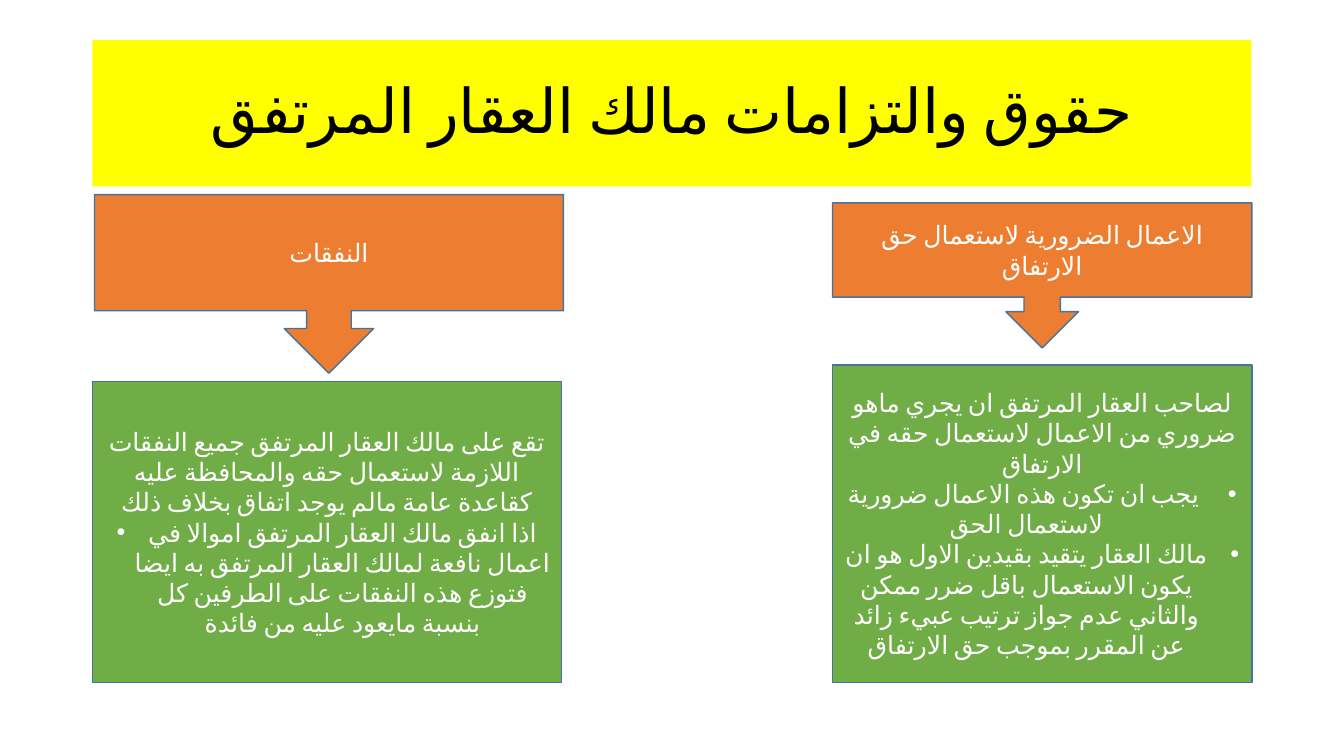
from pptx import Presentation
from pptx import util as u
from pptx.dml.color import RGBColor
from pptx.enum import shapes, text
from pptx.oxml.ns import qn
from lxml import etree

Pt = u.Pt
FONT = "Calibri"
BULLET_INDENT = Pt(22.5)


def add_block(kind, area, fill, line=None):
    left, top, width, height = (Pt(value) for value in area)
    block = page.shapes.add_shape(kind, left, top, width, height)
    block.shadow.inherit = False
    block.fill.solid()
    block.fill.fore_color.rgb = RGBColor.from_string(fill)
    if line:
        block.line.color.rgb = RGBColor.from_string(line)
        block.line.width = Pt(1)
    else:
        block.line.fill.background()
    block.text_frame.word_wrap = True
    block.text_frame.vertical_anchor = text.MSO_ANCHOR.MIDDLE
    return block


def write(para, content, size=18, color="FFFFFF", bullet=False, rtl=False):
    para.alignment = text.PP_ALIGN.CENTER
    span = para.add_run()
    span.text = content
    span.font.name = FONT
    span.font.size = Pt(size)
    span.font.color.rgb = RGBColor.from_string(color)
    # Arabic letters take the complex-script font
    etree.SubElement(span.font._element, qn("a:cs")).set("typeface", FONT)
    span.font._element.set("lang", "ar-IQ")
    properties = para._p.get_or_add_pPr()
    if rtl:
        properties.set("rtl", "1")
    if bullet:
        properties.set("marL", str(BULLET_INDENT))
        properties.set("indent", str(-BULLET_INDENT))
        font = etree.SubElement(properties, qn("a:buFont"))
        font.set("typeface", "Arial")
        etree.SubElement(properties, qn("a:buChar")).set("char", "•")


deck = Presentation()
deck.slide_width, deck.slide_height = Pt(960), Pt(540)
page = deck.slides.add_slide(deck.slide_layouts[6])

title = add_block(shapes.MSO_SHAPE.RECTANGLE, (66, 28.75, 828, 104.4), "FFFF00")
title_para = title.text_frame.paragraphs[0]
title_para.line_spacing = 0.9
write(title_para, "حقوق والتزامات مالك العقار المرتفق", size=44, color="000000")

# Each column: heading area and text, body area, introduction, bullets, bullet direction
columns = [
    ((594.7, 144.9, 299.5, 103.7), "الاعمال الضرورية لاستعمال حق الارتفاق",
     (594.7, 260.6, 299.5, 226.8),
     "لصاحب العقار المرتفق ان يجري ماهو ضروري من الاعمال لاستعمال حقه في الارتفاق",
     [" يجب ان تكون هذه الاعمال ضرورية لاستعمال الحق",
      "مالك العقار يتقيد بقيدين الاول هو ان يكون الاستعمال باقل ضرر ممكن "
      "والثاني عدم جواز ترتيب عبيء زائد عن المقرر بموجب حق الارتفاق"], True),
    ((67.5, 139, 335, 127.6), "النفقات",
     (66, 272.5, 335, 215),
     "تقع على مالك العقار المرتفق جميع النفقات اللازمة لاستعمال حقه "
     "والمحافظة عليه كقاعدة عامة مالم يوجد اتفاق بخلاف ذلك",
     ["اذا انفق مالك العقار المرتفق اموالا في اعمال نافعة لمالك العقار المرتفق به "
      "ايضا فتوزع هذه النفقات على الطرفين كل بنسبة مايعود عليه من فائدة"], False),
]

for heading_area, heading, body_area, introduction, bullets, rtl in columns:
    callout = add_block(shapes.MSO_SHAPE.DOWN_ARROW_CALLOUT, heading_area, "ED7D31", "43739E")
    write(callout.text_frame.paragraphs[0], heading)
    body = add_block(shapes.MSO_SHAPE.RECTANGLE, body_area, "70AD47", "43739E")
    write(body.text_frame.paragraphs[0], introduction)
    for item in bullets:
        write(body.text_frame.add_paragraph(), item, bullet=True, rtl=rtl)

deck.save("out.pptx")
